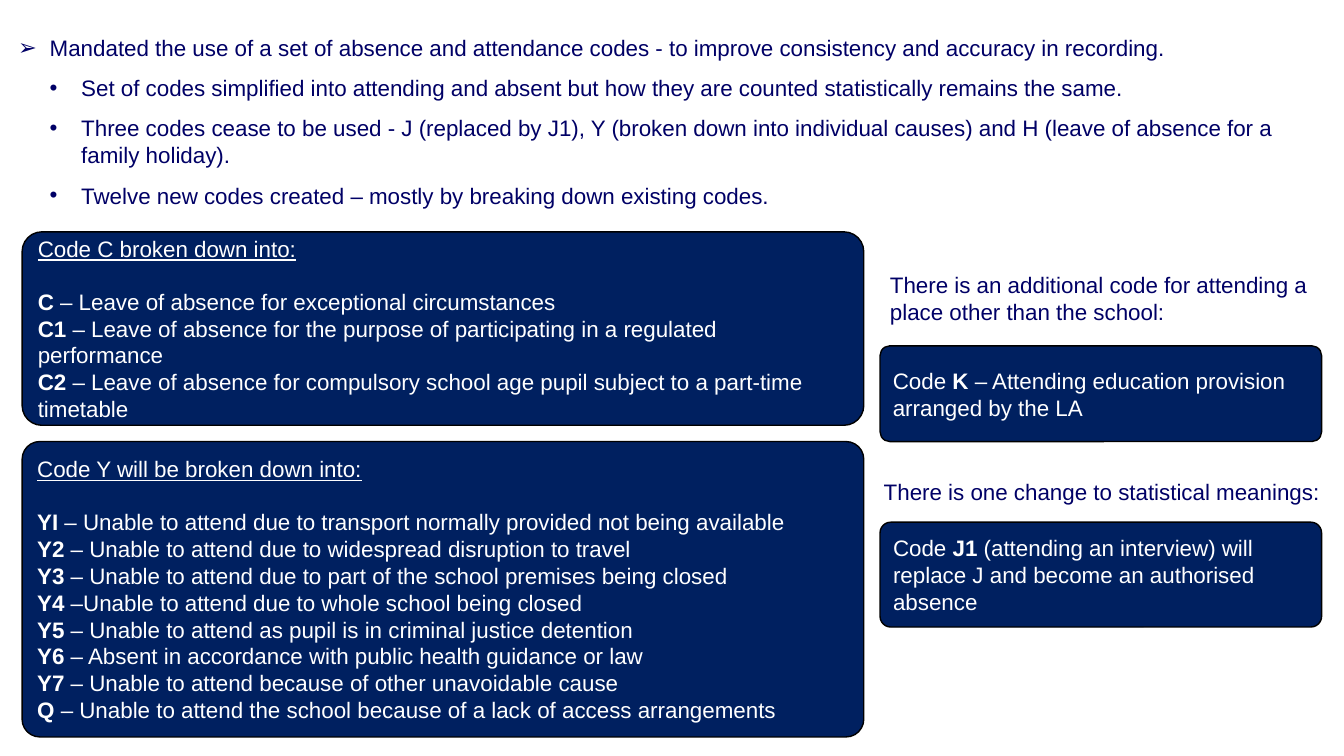
from dataclasses import dataclass

from lxml.etree import SubElement
from pptx import Presentation
from pptx.dml.color import RGBColor
from pptx.enum.shapes import MSO_SHAPE as Preset
from pptx.enum.text import MSO_ANCHOR as Anchor, MSO_AUTO_SIZE as AutoSize, PP_ALIGN as Align
from pptx.oxml.ns import qn
from pptx.util import Pt

NAVY, INK, WHITE, BLACK = "002060", "000066", "FFFFFF", "000000"
BULLET_STEP = 22.5
BULLET_GAP = 9.5
HEADING_GAP = 18.5


@dataclass(frozen=True)
class Area:
    left: float
    top: float
    width: float
    height: float

    def lengths(self) -> tuple:
        return Pt(self.left), Pt(self.top), Pt(self.width), Pt(self.height)


@dataclass(frozen=True)
class Span:
    text: str
    bold: bool = False
    underline: bool = False


@dataclass(frozen=True)
class Panel:
    area: Area
    rounding: float
    lines: list[list[Span]]


@dataclass(frozen=True)
class Caption:
    area: Area
    text: str


@dataclass(frozen=True)
class Bullet:
    mark: str
    level: int
    text: str


def code(name: str, meaning: str) -> list[Span]:
    return [Span(name, bold=True), Span(meaning)]


def heading(text: str) -> list[Span]:
    return [Span(text, underline=True)]


LIST_AREA = Area(5.8, 20.9, 927.4, 133.2)
BULLETS = [
    Bullet("➢", 1, "Mandated the use of a set of absence and attendance codes - to improve "
           "consistency and accuracy in recording."),
    Bullet("•", 2, "Set of codes simplified into attending and absent but how they are "
           "counted statistically remains the same."),
    Bullet("•", 2, "Three codes cease to be used - J (replaced by J1), Y (broken down into "
           "individual causes) and H (leave of absence for a family holiday)."),
    Bullet("•", 2, "Twelve new codes created – mostly by breaking down existing codes."),
]

PANELS = [
    Panel(Area(15.8, 165.6, 601.2, 138.2), 0.102, [
        heading("Code C broken down into:"),
        code("C ", "– Leave of absence for exceptional circumstances"),
        code("C1 ", "– Leave of absence for the purpose of participating in a regulated performance"),
        code("C2", " – Leave of absence for compulsory school age pupil subject to a "
             "part-time timetable"),
    ]),
    Panel(Area(15.8, 315.4, 601.2, 211), 0.06, [
        heading("Code Y will be broken down into:"),
        code("YI ", "– Unable to attend due to transport normally provided not being available"),
        code("Y2 ", "– Unable to attend due to widespread disruption to travel"),
        code("Y3", " – Unable to attend due to part of the school premises being closed"),
        code("Y4", " –Unable to attend due to whole school being closed"),
        code("Y5 ", "– Unable to attend as pupil is in criminal justice detention"),
        code("Y6", " – Absent in accordance with public health guidance or law"),
        code("Y7", " – Unable to attend because of other unavoidable cause"),
        code("Q ", "– Unable to attend the school because of a lack of access arrangements"),
    ]),
    Panel(Area(628.6, 247, 315.4, 68.4), 0.102, [
        [Span("Code "), *code("K", " – Attending education provision arranged by the LA")],
    ]),
    Panel(Area(628.6, 373, 315.4, 74.9), 0.102, [
        [Span("Code "), *code("J1", " (attending an interview) will replace J and become "
                              "an authorised absence")],
    ]),
]

CAPTIONS = [
    Caption(Area(628.6, 190.1, 321.1, 46.1),
            "There is an additional code for attending a place other than the school:"),
    Caption(Area(624.2, 337.7, 333, 26.6), "There is one change to statistical meanings:"),
]


def colour(value: str) -> RGBColor:
    return RGBColor.from_string(value)


def add_span(para, span: Span, ink: str) -> None:
    run = para.add_run()
    run.text = span.text
    run.font.name = "Arial"
    run.font.size = Pt(16)
    run.font.bold = span.bold
    run.font.underline = span.underline
    run.font.color.rgb = colour(ink)


def next_para(frame, index: int):
    para = frame.add_paragraph() if index else frame.paragraphs[0]
    para.alignment = Align.LEFT
    return para


def fill_list(box, bullets: list[Bullet]) -> None:
    box.left, box.top, box.width, box.height = LIST_AREA.lengths()
    frame = box.text_frame
    frame.auto_size = AutoSize.NONE
    frame.vertical_anchor = Anchor.TOP
    for index, bullet in enumerate(bullets):
        para = next_para(frame, index)
        para.level = bullet.level - 1
        para.space_before = Pt(BULLET_GAP if index else 0)
        properties = para._p.get_or_add_pPr()
        properties.set("marL", str(Pt(BULLET_STEP * bullet.level)))
        properties.set("indent", str(-Pt(BULLET_STEP)))
        SubElement(properties, qn("a:buFont"), typeface="Arial")
        SubElement(properties, qn("a:buChar"), char=bullet.mark)
        add_span(para, Span(bullet.text), INK)


def add_panel(page, panel: Panel) -> None:
    box = page.shapes.add_shape(Preset.ROUNDED_RECTANGLE, *panel.area.lengths())
    box.adjustments[0] = panel.rounding
    box.shadow.inherit = False
    box.fill.solid()
    box.fill.fore_color.rgb = colour(NAVY)
    box.line.color.rgb = colour(BLACK)
    box.line.width = Pt(1)
    frame = box.text_frame
    frame.word_wrap = True
    frame.vertical_anchor = Anchor.MIDDLE
    for index, line in enumerate(panel.lines):
        para = next_para(frame, index)
        if index == 1:
            para.space_before = Pt(HEADING_GAP)
        for span in line:
            add_span(para, span, WHITE)


def add_caption(page, caption: Caption) -> None:
    frame = page.shapes.add_textbox(*caption.area.lengths()).text_frame
    frame.word_wrap = True
    add_span(next_para(frame, 0), Span(caption.text), INK)


def main() -> None:
    deck = Presentation()
    deck.slide_width, deck.slide_height = Pt(960), Pt(540)
    page = deck.slides.add_slide(deck.slide_layouts[1])
    title = page.shapes.title
    title.element.getparent().remove(title.element)
    fill_list(page.placeholders[1], BULLETS)
    for panel in PANELS:
        add_panel(page, panel)
    for caption in CAPTIONS:
        add_caption(page, caption)
    deck.save("out.pptx")


if __name__ == "__main__":
    main()
